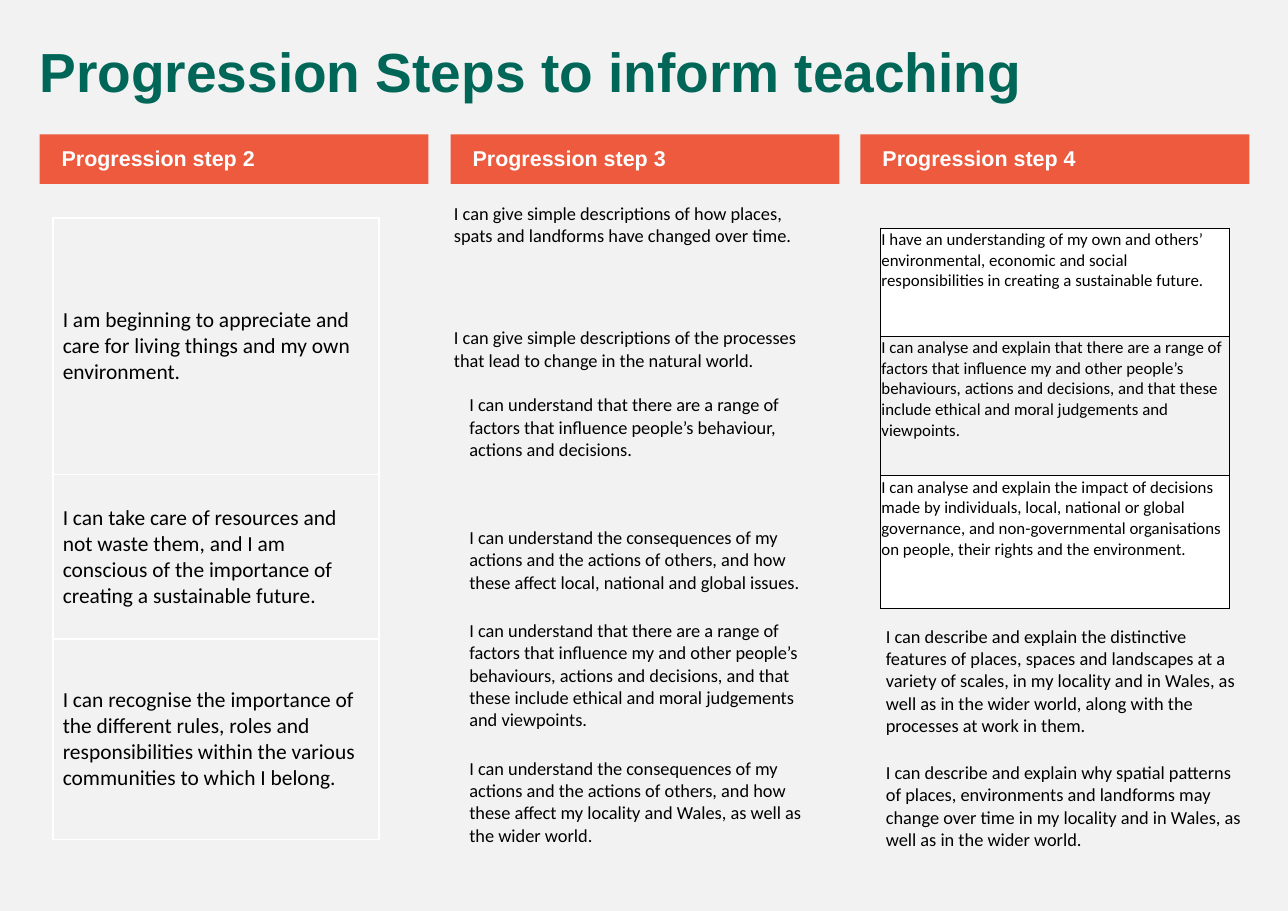
from pptx import Presentation
from pptx.dml.color import RGBColor
from pptx.enum.shapes import MSO_SHAPE as SHAPE
from pptx.enum.text import MSO_ANCHOR as ANCHOR
from pptx.oxml import parse_xml
from pptx.oxml.ns import nsdecls
from pptx.util import Emu, Pt

PX = 9144  # 100 px to the inch
COLORS = {"page": "F2F2F2", "bar": "ED5A3E", "title": "006758",
          "white": "FFFFFF", "black": "000000"}
NO_STYLE = "{2D5ABB26-0587-4C30-8999-92F81FD0307C}"

STEP_2 = [
    "I am beginning to appreciate and care for living things and my own environment.",
    "I can take care of resources and not waste them, and I am conscious of the "
    "importance of creating a sustainable future.",
    "I can recognise the importance of the different rules, roles and responsibilities "
    "within the various communities to which I belong.",
]
FACTORS = ("there are a range of factors that influence my and other people’s "
           "behaviours, actions and decisions, and that these include ethical and "
           "moral judgements and viewpoints.")
CONSEQUENCES = ("I can understand the consequences of my actions and the actions of "
                "others, and how these affect ")
STEP_3_CHANGE = [
    "I can give simple descriptions of how places, spats and landforms have changed "
    "over time.",
    "I can give simple descriptions of the processes that lead to change in the "
    "natural world.",
]
STEP_3_ACTIONS = [
    "I can understand that there are a range of factors that influence people’s "
    "behaviour, actions and decisions.",
    CONSEQUENCES + "local, national and global issues.",
    "I can understand that " + FACTORS,
    CONSEQUENCES + "my locality and Wales, as well as the wider world.",
]
STEP_4_IMPACT = [
    "I have an understanding of my own and others’ environmental, economic and social "
    "responsibilities in creating a sustainable future.",
    "I can analyse and explain that " + FACTORS,
    "I can analyse and explain the impact of decisions made by individuals, local, "
    "national or global governance, and non-governmental organisations on people, "
    "their rights and the environment.",
]
STEP_4_PLACES = [
    "I can describe and explain the distinctive features of places, spaces and "
    "landscapes at a variety of scales, in my locality and in Wales, as well as in the "
    "wider world, along with the processes at work in them.",
    "I can describe and explain why spatial patterns of places, environments and "
    "landforms may change over time in my locality and in Wales, as well as in the "
    "wider world.",
]


def px(*values):
    return [Emu(v * PX) for v in values]


def rgb(name):
    return RGBColor.from_string(COLORS[name])


def put_text(tf, text, size=12, font="Calibri", color="black", bold=False,
             spacing=None, before=None):
    tf.word_wrap = True
    p = tf.paragraphs[0]
    p.line_spacing = spacing
    p.space_before = None if before is None else Pt(before)
    r = p.add_run()
    r.text = text
    r.font.size, r.font.name, r.font.bold = Pt(size), font, bold
    r.font.color.rgb = rgb(color)


def add_title(slide, box, text):
    tf = slide.shapes.add_textbox(*px(*box)).text_frame
    put_text(tf, text, size=36, font="Arial", color="title", bold=True,
             spacing=0.9, before=11)


def add_step_bar(slide, box, text):
    sp = slide.shapes.add_shape(SHAPE.RECTANGLE, *px(*box))
    sp.shadow.inherit = False
    sp.fill.solid()
    sp.fill.fore_color.rgb = rgb("bar")
    sp.line.fill.background()
    tf = sp.text_frame
    tf.vertical_anchor = ANCHOR.MIDDLE
    tf.margin_left = Emu(20 * PX)
    put_text(tf, text, size=14, font="Arial", color="white", bold=True,
             spacing=0.9, before=11)
    tf.paragraphs[0].alignment = 1


def set_borders(cell, color, width):
    tc_pr = cell._tc.get_or_add_tcPr()
    for i, side in enumerate("LRTB"):
        tc_pr.insert(i, parse_xml(
            f'<a:ln{side} {nsdecls("a")} w="{Pt(width)}"><a:solidFill>'
            f'<a:srgbClr val="{COLORS[color]}"/></a:solidFill></a:ln{side}>'))


def add_statements(slide, left, top, width, heights, texts, size=12,
                   anchor=ANCHOR.MIDDLE, margins=(10, 5, 10, 5), border=None,
                   white_rows=()):
    frame = slide.shapes.add_table(len(texts), 1, *px(left, top, width, sum(heights)))
    table = frame.table
    table.first_row = table.horz_banding = False
    table._tbl.tblPr[0].text = NO_STYLE
    for i, (height, text) in enumerate(zip(heights, texts)):
        table.rows[i].height = Emu(height * PX)
        cell = table.cell(i, 0)
        cell.vertical_anchor = anchor
        (cell.margin_left, cell.margin_top,
         cell.margin_right, cell.margin_bottom) = px(*margins)
        if i in white_rows:
            cell.fill.solid()
            cell.fill.fore_color.rgb = rgb("white")
        else:
            cell.fill.background()
        if border:
            set_borders(cell, *border)
        put_text(cell.text_frame, text, size=size)


def build_slide(prs):
    slide = prs.slides.add_slide(prs.slide_layouts[6])
    slide.background.fill.solid()
    slide.background.fill.fore_color.rgb = rgb("page")
    for step, left in enumerate((36, 409, 781), start=2):
        add_step_bar(slide, (left, 122, 353, 45), f"Progression step {step}")
    add_title(slide, (26, 36, 1108, 65), "Progression Steps to inform teaching")
    add_statements(slide, 48, 198, 296, (233, 149, 182), STEP_2, size=14,
                   margins=(9, 4, 9, 4), border=("white", 1))
    add_statements(slide, 416, 315, 334, (147, 94, 115, 115), STEP_3_ACTIONS)
    add_statements(slide, 799, 207, 317, (98, 127, 120), STEP_4_IMPACT, size=11,
                   anchor=ANCHOR.TOP, margins=(1, 1, 1, 5), border=("black", 0.5),
                   white_rows=(0, 2))
    add_statements(slide, 794, 563, 350, (107, 119), STEP_4_PLACES)
    add_statements(slide, 402, 135, 356, (139, 87), STEP_3_CHANGE)


def main():
    prs = Presentation()
    prs.slide_width, prs.slide_height = px(1169, 827)
    build_slide(prs)
    prs.save("out.pptx")


if __name__ == "__main__":
    main()
